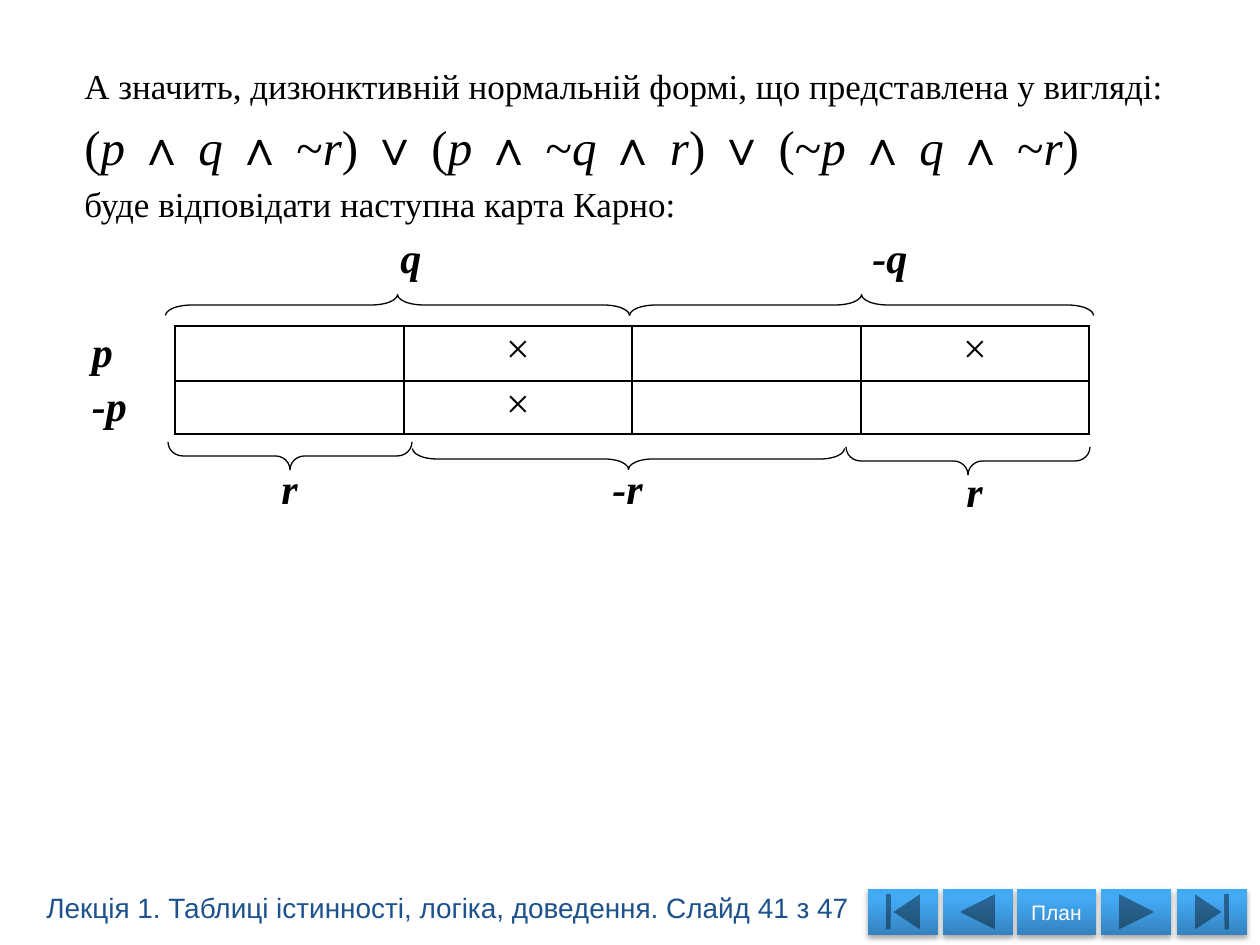
from copy import deepcopy
from lxml import etree
from pptx import Presentation
from pptx import util as u
from pptx.dml import color as c
from pptx.enum import shapes, text
from pptx.oxml import ns

SERIF = "Times New Roman"
LABEL = {"name": SERIF, "size": u.Pt(24), "bold": True, "italic": True}
CROSS = {"name": SERIF, "size": u.Pt(24), "bold": False, "italic": False}


def px(*values):
    return [u.Emu(round(value * 914400 / 126)) for value in values]


def write(para, words, style, hue="000000"):
    span = para.add_run()
    span.text = words
    for key, value in style.items():
        setattr(span.font, key, value)
    span.font.color.rgb = c.RGBColor.from_string(hue)


deck = Presentation()
deck.slide_width, deck.slide_height = px(1260, 945)
page = deck.slides.add_slide(deck.slide_layouts[6])

body = page.shapes.add_textbox(*px(72, 58, 1134, 791)).text_frame
body.word_wrap = True
body.margin_top = px(7)[0]
lines = [
    ("А значить, дизюнктивній нормальній формі, що представлена у вигляді:", 20, 0),
    ("(р ∧ q ∧ ~r) ∨ (р ∧ ~q ∧ r) ∨ (~р ∧ q ∧ ~r)", 28, 5.6),
    ("буде відповідати наступна карта Карно:", 20, 4),
]
for index, (words, size, gap) in enumerate(lines):
    para = body.add_paragraph() if index else body.paragraphs[0]
    para.space_before = u.Pt(gap)
    style = {"name": SERIF, "size": u.Pt(size)}
    if size == 28:
        for letter in words:
            write(para, letter, {**style, "italic": letter in "рqr"})
    else:
        write(para, words, style)

table = page.shapes.add_table(2, 5, *px(83, 326, 1006, 108)).table
table.first_row = table.horz_banding = False
for column, width in zip(table.columns, px(92, 229, 228, 229, 228)):
    column.width = width
for row, height in zip(table.rows, px(55, 53)):
    row.height = height
karnaugh = [["р", "", "×", "", "×"], ["-р", "", "×", "", ""]]
for row, marks in enumerate(karnaugh):
    for column, mark in enumerate(marks):
        cell = table.cell(row, column)
        cell.margin_left = cell.margin_right = px(9)[0]
        cell.margin_top = cell.margin_bottom = 0
        cell.fill.background()
        para = cell.text_frame.paragraphs[0]
        if column == 0:
            cell.vertical_anchor = text.MSO_ANCHOR.MIDDLE
        else:
            para.alignment = text.PP_ALIGN.CENTER
        if mark:
            write(para, mark, CROSS if column else LABEL)
        props = cell._tc.get_or_add_tcPr()
        for place, side in enumerate(("lnL", "lnR", "lnT", "lnB")):
            border = etree.Element(ns.qn(f"a:{side}"), w="12700")
            if column or side == "lnR":
                solid = etree.SubElement(border, ns.qn("a:solidFill"))
                etree.SubElement(solid, ns.qn("a:srgbClr"), val="000000")
            else:
                etree.SubElement(border, ns.qn("a:noFill"))
            props.insert(place, border)

LEFT, RIGHT = shapes.MSO_SHAPE.LEFT_BRACE, shapes.MSO_SHAPE.RIGHT_BRACE
braces = [
    (LEFT, 387, 73, 21, 464, 1.25),
    (LEFT, 851, 73, 21, 464, 1.25),
    (RIGHT, 276, 334, 28, 244, 0.52),
    (RIGHT, 618, 243, 21, 432, 1.16),
    (RIGHT, 954, 339, 28, 244, 0.52),
]
for kind, left, top, width, height, curl in braces:
    brace = page.shapes.add_shape(kind, *px(left, top, width, height))
    brace.rotation = 90
    brace.adjustments[0] = curl
    brace.adjustments[1] = 0.5
    brace.shadow.inherit = False
    brace.fill.background()
    brace.line.color.rgb = c.RGBColor.from_string("000000")
    brace.line.width = u.Pt(0.75)

heading = page.shapes.add_textbox(*px(347, 224, 586, 115)).text_frame
heading.word_wrap = True
heading.margin_top = px(8)[0]
para = heading.paragraphs[0]
tabs = etree.SubElement(para._p.get_or_add_pPr(), ns.qn("a:tabLst"))
for stop in px(41, 513):
    etree.SubElement(tabs, ns.qn("a:tab"), pos=str(int(stop)), algn="l")
write(para, "\tq\t-q", LABEL)

for words, left, top, width in [("r", 269, 456, 46), ("-r", 600, 456, 64), ("r", 954, 459, 46)]:
    box = page.shapes.add_textbox(*px(left, top, width, 63)).text_frame
    box.word_wrap = False
    write(box.paragraphs[0], words, LABEL)

buttons = [
    ("BEGINNING", 868, 70),
    ("BACK_OR_PREVIOUS", 943, 70),
    ("CUSTOM", 1017, 79),
    ("FORWARD_OR_NEXT", 1101, 70),
    ("END", 1177, 70),
]
for kind, left, width in buttons:
    kind = getattr(shapes.MSO_SHAPE, f"ACTION_BUTTON_{kind}")
    button = page.shapes.add_shape(kind, *px(left, 889, width, 46))
    button.line.fill.background()
    button.fill.gradient()
    button.fill.gradient_angle = 90
    stops = button._element.spPr.find(f".//{ns.qn('a:gsLst')}")
    stops.append(deepcopy(stops[-1]))
    blues = [(0, "3483BE"), (0.8, "44AAF6"), (1, "40ABFB")]
    for stop, (position, hue) in zip(button.fill.gradient_stops, blues):
        stop.position = position
        stop.color.rgb = c.RGBColor.from_string(hue)
    button.shadow.inherit = False
    effects = button._element.spPr.find(ns.qn("a:effectLst"))
    shadow = etree.SubElement(effects, ns.qn("a:outerShdw"), blurRad="39370",
                              dist="22860", dir="5400000", rotWithShape="0")
    tint = etree.SubElement(shadow, ns.qn("a:srgbClr"), val="000000")
    etree.SubElement(tint, ns.qn("a:alpha"), val="35000")
    if kind == shapes.MSO_SHAPE.ACTION_BUTTON_CUSTOM:
        frame = button.text_frame
        frame.vertical_anchor = text.MSO_ANCHOR.MIDDLE
        frame.paragraphs[0].alignment = text.PP_ALIGN.CENTER
        write(frame.paragraphs[0], "План", {"name": "Arial", "size": u.Pt(12)}, "FFFFFF")

footer = page.shapes.add_textbox(*px(34, 884, 839, 47)).text_frame
footer.word_wrap = False
write(footer.paragraphs[0], "Лекція 1. Таблиці істинності, логіка, доведення. Слайд 41 з 47",
      {"name": "Arial", "size": u.Pt(16)}, "1D528D")

deck.save("out.pptx")
